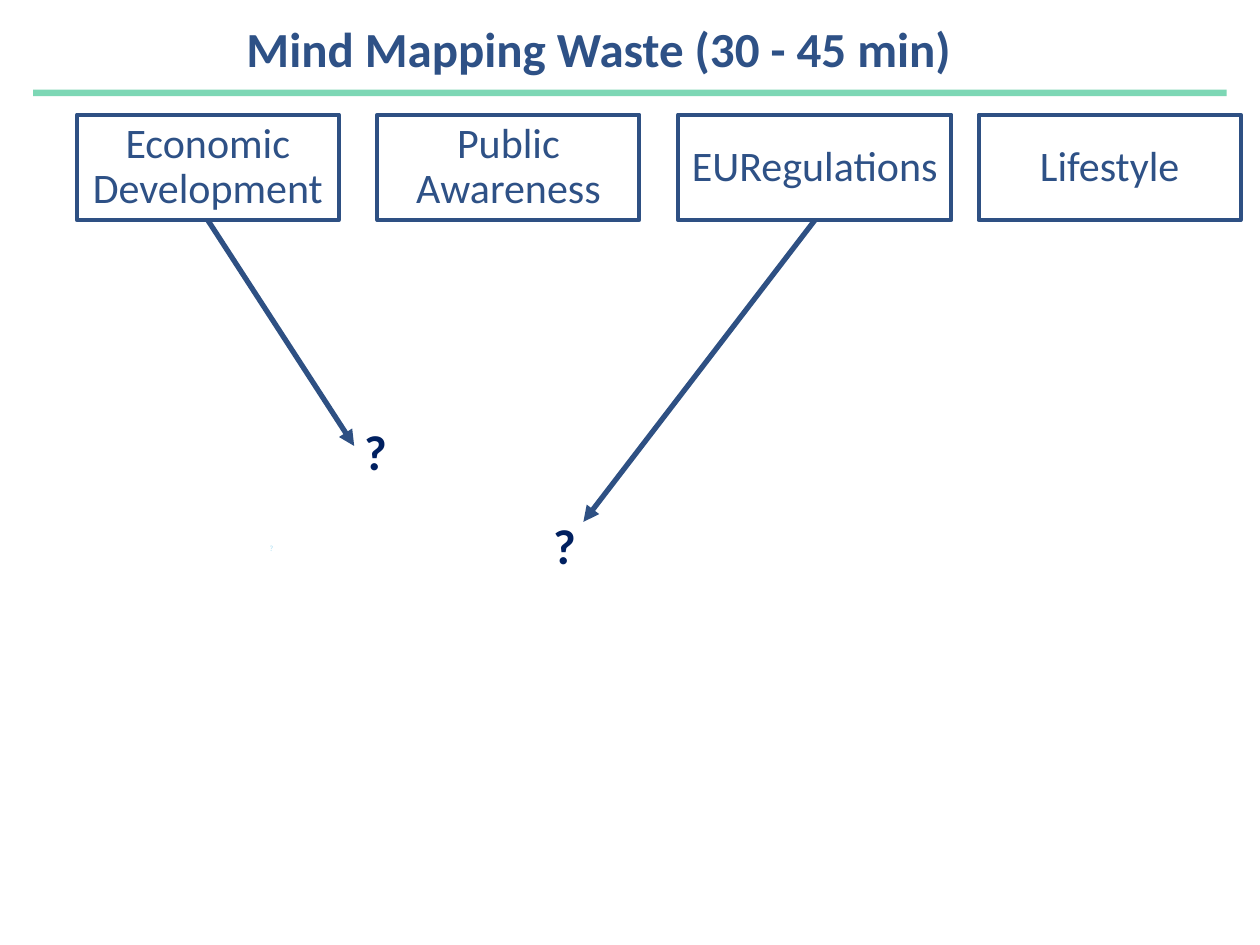
from dataclasses import dataclass

from lxml.etree import SubElement
from pptx import Presentation
from pptx.dml.color import RGBColor as Rgb
from pptx.enum.shapes import MSO_CONNECTOR as Connector, MSO_SHAPE as Preset
from pptx.enum.text import MSO_ANCHOR as Anchor, PP_ALIGN as Align
from pptx.oxml.ns import qn
from pptx.util import Cm, Pt


@dataclass(frozen=True)
class Theme:
    font: str = "Calibri"
    ink: str = "2E5186"
    outline: str = "2E5083"
    rule: str = "7DD7B5"
    question: str = "002060"
    faint: str = "A8DDF3"
    heading_size: float = 28
    topic_size: float = 24
    faint_size: float = 4.5
    box_width: float = 2.25
    arrow_width: float = 3


THEME = Theme()
HEADING = "Mind Mapping Waste (30 - 45 min)"
TOPICS = [
    ("Economic Development", 5.28),
    ("Public Awareness", 5.28),
    ("EURegulations", 5.51),
    ("Lifestyle", 5.28),
]
ARROWS = [(0, (7.14, 8.99)), (2, (11.76, 10.52))]
QUESTIONS = [(7.09, 8.38), (10.9, 10.26)]
TOPIC_LEFT, TOPIC_TOP, TOPIC_PITCH, TOPIC_HEIGHT = 1.55, 2.31, 6.06, 2.13


def write(holder, words, size, color, bold=False, align=Align.LEFT,
          anchor=Anchor.TOP, spacing=1.0, inset=None):
    frame = holder.text_frame
    frame.word_wrap = True
    frame.vertical_anchor = anchor
    if inset is not None:
        frame.margin_left = frame.margin_right = Cm(inset)
        frame.margin_top = frame.margin_bottom = Cm(inset)
    line = frame.paragraphs[0]
    line.text = words
    line.alignment = align
    line.line_spacing = spacing
    line.font.name = THEME.font
    line.font.size = Pt(size)
    line.font.bold = bold
    line.font.color.rgb = Rgb.from_string(color)


def add_rectangle(slide, left, top, width, height):
    rectangle = slide.shapes.add_shape(
        Preset.RECTANGLE, Cm(left), Cm(top), Cm(width), Cm(height))
    rectangle.shadow.inherit = False
    return rectangle


def add_words(slide, left, top, width, height, words, size, color, **style):
    area = slide.shapes.add_textbox(Cm(left), Cm(top), Cm(width), Cm(height))
    write(area, words, size, color, **style)


def add_topic(slide, column, words, width):
    topic = add_rectangle(slide, TOPIC_LEFT + column * TOPIC_PITCH,
                          TOPIC_TOP, width, TOPIC_HEIGHT)
    topic.fill.background()
    topic.line.color.rgb = Rgb.from_string(THEME.outline)
    topic.line.width = Pt(THEME.box_width)
    write(topic, words, THEME.topic_size, THEME.ink, align=Align.CENTER,
          anchor=Anchor.MIDDLE, spacing=0.9, inset=0.1)
    return topic


def add_arrow(slide, topic, target):
    start_x = topic.left + topic.width // 2
    start_y = topic.top + topic.height
    arrow = slide.shapes.add_connector(
        Connector.STRAIGHT, start_x, start_y, *map(Cm, target))
    arrow.begin_connect(topic, 2)
    arrow.line.color.rgb = Rgb.from_string(THEME.outline)
    arrow.line.width = Pt(THEME.arrow_width)
    SubElement(arrow.line._get_or_add_ln(), qn("a:tailEnd"), type="triangle")
    SubElement(arrow._element.spPr, qn("a:effectLst"))


def main():
    deck = Presentation()
    deck.slide_width, deck.slide_height = Cm(25.4), Cm(19.05)
    slide = deck.slides.add_slide(deck.slide_layouts[6])

    rule = add_rectangle(slide, 0.67, 1.81, 24.06, 0.13)
    rule.fill.solid()
    rule.fill.fore_color.rgb = Rgb.from_string(THEME.rule)
    rule.line.fill.background()

    add_words(slide, 4.72, 0.3, 21.9, 1.5, HEADING, THEME.heading_size,
              THEME.ink, bold=True, anchor=Anchor.MIDDLE, spacing=0.9)

    topics = [add_topic(slide, column, *topic)
              for column, topic in enumerate(TOPICS)]
    for column, target in ARROWS:
        add_arrow(slide, topics[column], target)

    add_words(slide, 5.38, 10.95, 0.13, 0.13, "?", THEME.faint_size,
              THEME.faint, align=Align.RIGHT, inset=0)
    for left, top in QUESTIONS:
        add_words(slide, left, top, 0.64, 1.6, "?", THEME.heading_size,
                  THEME.question, bold=True, align=Align.RIGHT)

    deck.save("out.pptx")


if __name__ == "__main__":
    main()
